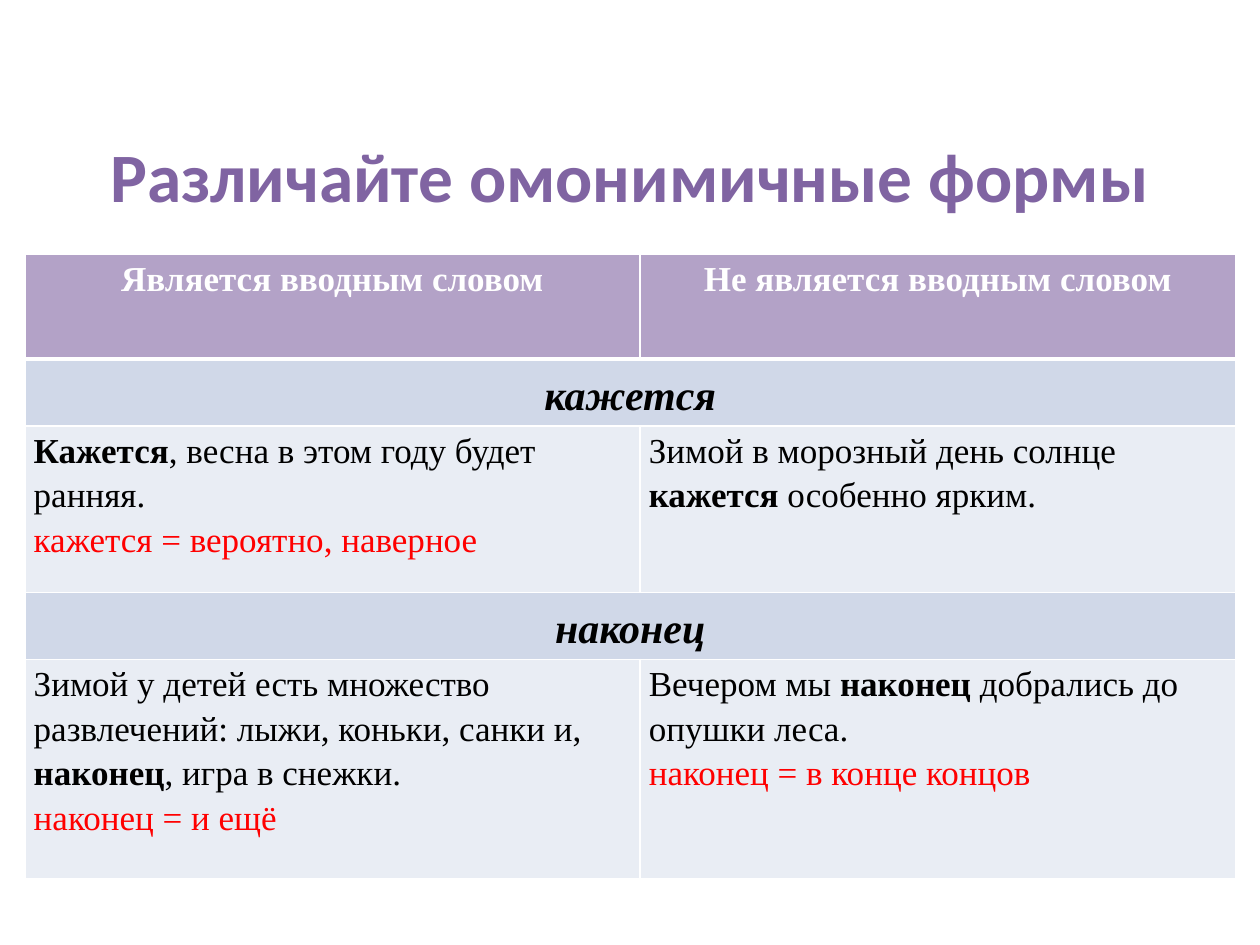
from dataclasses import dataclass

from lxml import etree
from pptx import Presentation
from pptx.dml.color import RGBColor
from pptx.enum.text import MSO_ANCHOR, PP_ALIGN
from pptx.oxml.ns import qn
from pptx.util import Cm, Pt

CENTER, LEFT = PP_ALIGN.CENTER, PP_ALIGN.LEFT
TOP, MIDDLE = MSO_ANCHOR.TOP, MSO_ANCHOR.MIDDLE


@dataclass(frozen=True)
class Theme:
    title_font: str = "Calibri"
    table_font: str = "Times New Roman"
    title_size: float = 39.6
    word_size: float = 24
    body_size: float = 20
    title: str = "8064A2"
    white: str = "FFFFFF"
    black: str = "000000"
    red: str = "FF0000"
    header_fill: str = "B3A2C7"
    word_fill: str = "D0D8E8"
    example_fill: str = "E9EDF4"


THEME = Theme()

TITLE = "Различайте омонимичные формы"
HEADERS = ["Является вводным словом", "Не является вводным словом"]
# Each cell: the example as (before, word, after), then its meaning or None.
GROUPS = [
    ("кажется", [
        (("", "Кажется", ", весна в этом году будет ранняя."),
         "кажется = вероятно, наверное"),
        (("Зимой в морозный день солнце ", "кажется", " особенно ярким."), None),
    ]),
    ("наконец", [
        (("Зимой у детей есть множество развлечений: лыжи, коньки, санки и, ",
          "наконец", ", игра в снежки."),
         "наконец = и ещё"),
        (("Вечером мы ", "наконец", " добрались до опушки леса."),
         "наконец = в конце концов"),
    ]),
]

TITLE_BOX = (Cm(1.27), Cm(2.13), Cm(22.86), Cm(2.79))
TABLE_LEFT, TABLE_TOP = Cm(0.5), Cm(5.13)
COLUMN_WIDTHS = [Cm(12.4), Cm(12.01)]
HEADER_HEIGHT, WORD_HEIGHT = Cm(2.11), Cm(1.35)
EXAMPLE_HEIGHTS = [Cm(3.35), Cm(4.42)]


def add_run(paragraph, text, size, color, font=THEME.table_font, bold=False, italic=False):
    run = paragraph.add_run()
    run.text = text
    run.font.name = font
    run.font.size = Pt(size)
    run.font.bold = bold
    run.font.italic = italic
    run.font.color.rgb = RGBColor.from_string(color)


def set_borders(cell, bottom=1):
    """Draw white borders, in points, ahead of the fill as the schema requires."""
    properties = cell._tc.get_or_add_tcPr()
    widths = {"a:lnL": 1, "a:lnR": 1, "a:lnT": 1, "a:lnB": bottom}
    for position, (tag, width) in enumerate(widths.items()):
        line = etree.Element(qn(tag), w=str(Pt(width)))
        fill = etree.SubElement(line, qn("a:solidFill"))
        etree.SubElement(fill, qn("a:srgbClr"), val=THEME.white)
        properties.insert(position, line)


def format_cell(cell, fill, anchor=TOP, bottom=1):
    cell.fill.solid()
    cell.fill.fore_color.rgb = RGBColor.from_string(fill)
    cell.vertical_anchor = anchor
    cell.margin_left = cell.margin_right = Cm(0.18)
    cell.margin_top = cell.margin_bottom = 0
    set_borders(cell, bottom)


def format_paragraph(paragraph, alignment=LEFT):
    paragraph.alignment = alignment
    paragraph.line_spacing = 1.15
    return paragraph


def add_title(slide):
    frame = slide.shapes.add_textbox(*TITLE_BOX).text_frame
    frame.word_wrap = True
    frame.vertical_anchor = MIDDLE
    paragraph = frame.paragraphs[0]
    paragraph.alignment = CENTER
    add_run(paragraph, TITLE, THEME.title_size, THEME.title, THEME.title_font, bold=True)


def fill_header(cell, text):
    format_cell(cell, THEME.header_fill, bottom=3)
    paragraph = format_paragraph(cell.text_frame.paragraphs[0], CENTER)
    add_run(paragraph, text, THEME.body_size, THEME.white, bold=True)


def fill_word_row(table, row, word):
    first, last = table.cell(row, 0), table.cell(row, 1)
    first.merge(last)
    for cell in (first, last):
        format_cell(cell, THEME.word_fill, MIDDLE)
    paragraph = format_paragraph(first.text_frame.paragraphs[0], CENTER)
    add_run(paragraph, word, THEME.word_size, THEME.black, bold=True, italic=True)


def fill_example(cell, example, meaning):
    format_cell(cell, THEME.example_fill)
    frame = cell.text_frame
    paragraph = format_paragraph(frame.paragraphs[0])
    for text, bold in zip(example, (False, True, False)):
        if text:
            add_run(paragraph, text, THEME.body_size, THEME.black, bold=bold)
    if meaning:
        paragraph = format_paragraph(frame.add_paragraph())
        add_run(paragraph, meaning, THEME.body_size, THEME.red)


def add_comparison_table(slide):
    heights = [HEADER_HEIGHT]
    for height in EXAMPLE_HEIGHTS:
        heights += [WORD_HEIGHT, height]
    table = slide.shapes.add_table(
        len(heights), len(COLUMN_WIDTHS), TABLE_LEFT, TABLE_TOP,
        sum(COLUMN_WIDTHS), sum(heights)).table
    for column, width in zip(table.columns, COLUMN_WIDTHS):
        column.width = width
    for row, height in zip(table.rows, heights):
        row.height = height

    for column, text in enumerate(HEADERS):
        fill_header(table.cell(0, column), text)
    for group, (word, examples) in enumerate(GROUPS):
        word_row = 1 + 2 * group
        fill_word_row(table, word_row, word)
        for column, (example, meaning) in enumerate(examples):
            fill_example(table.cell(word_row + 1, column), example, meaning)


def main():
    presentation = Presentation()
    presentation.slide_width, presentation.slide_height = Cm(25.4), Cm(19.05)
    slide = presentation.slides.add_slide(presentation.slide_layouts[6])
    add_title(slide)
    add_comparison_table(slide)
    presentation.save("out.pptx")


if __name__ == "__main__":
    main()
